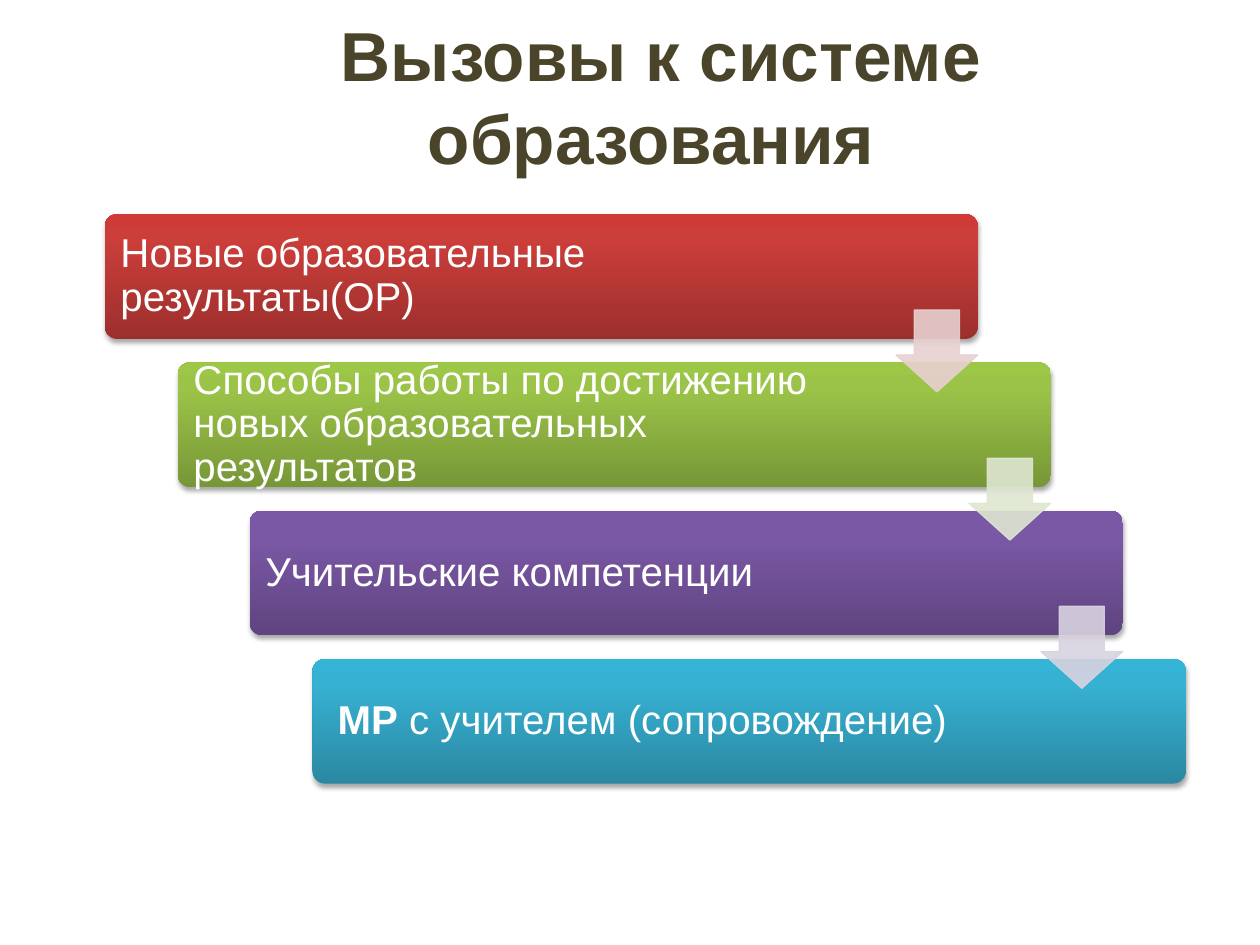
import lxml.etree
import pptx
import pptx.dml.color
import pptx.enum.shapes
import pptx.enum.text
import pptx.oxml
import pptx.oxml.ns
import pptx.util

Pt = pptx.util.Pt
SHAPES = pptx.enum.shapes.MSO_SHAPE
ALIGN = pptx.enum.text.PP_ALIGN
NAMESPACE = pptx.oxml.ns.nsdecls("a")

STEP_WIDTH, STEP_HEIGHT = 499, 71.3
FIRST_TOP, STEP_PITCH = 122.4, 84.7
ARROW_SIZE = 46.8

# Left edge, text width, gradient (bottom to top), runs as (text, font, bold)
STEPS = [
    (59.8, 415.4, ("9C2F2D", "CB3E3A", "CE3B37"),
     [("Новые образовательные результаты(ОР)", "Arial", False)]),
    (101.5, 406.1, ("779737", "9BC348", "9DC746"),
     [("Способы работы по достижению новых образовательных результатов",
       "Arial", False)]),
    (142.6, 406.8, ("5F4480", "7B58A6", "7C57A8"),
     [("Учительские компетенции", "Arial", False)]),
    (178.6, 406.1, ("2A88A2", "37B1D2", "34B4D6"),
     [(" ", "Calibri", False), ("МР", "Arial", True),
      (" с учителем (сопровождение)", "Arial", False)]),
]
ARROW_COLORS = ["E8D0D0", "DEE7D1", "D8D3E0"]


def color(value):
    return pptx.dml.color.RGBColor.from_string(value)


def add_text_box(slide, left, top, width, height, inset_x, inset_y):
    box = slide.shapes.add_textbox(Pt(left), Pt(top), Pt(width), Pt(height))
    frame = box.text_frame
    frame.word_wrap = True
    frame.vertical_anchor = pptx.enum.text.MSO_ANCHOR.MIDDLE
    frame.margin_left = frame.margin_right = Pt(inset_x)
    frame.margin_top = frame.margin_bottom = Pt(inset_y)
    return frame.paragraphs[0]


def add_title(slide, left, top, width, height):
    paragraph = add_text_box(slide, left, top, width, height, 7.2, 3.6)
    paragraph.text = "Вызовы к системе образования "
    paragraph.alignment = ALIGN.CENTER
    font = paragraph.font
    font.name, font.size, font.bold = "Arial", Pt(39.6), True
    font.color.rgb = color("4A452A")


def set_gradient_and_shadow(shape, colors):
    stops = "".join(
        f'<a:gs pos="{position}"><a:srgbClr val="{value}"/></a:gs>'
        for position, value in zip((0, 80000, 100000), colors))
    gradient = pptx.oxml.parse_xml(
        f'<a:gradFill {NAMESPACE} rotWithShape="1"><a:gsLst>{stops}</a:gsLst>'
        '<a:lin ang="16200000" scaled="0"/></a:gradFill>')
    effects = pptx.oxml.parse_xml(
        f'<a:effectLst {NAMESPACE}><a:outerShdw blurRad="{Pt(3.1)}" '
        f'dist="{Pt(1.8)}" dir="5400000" rotWithShape="0">'
        '<a:srgbClr val="000000"><a:alpha val="35000"/></a:srgbClr>'
        '</a:outerShdw></a:effectLst>')
    shape.line.fill.background()
    properties = shape.element.spPr
    properties.find(pptx.oxml.ns.qn("a:ln")).addprevious(gradient)
    properties.append(effects)


def add_step(slide, left, top, width, height, text_width, colors, runs):
    # Coloured bar
    bar = slide.shapes.add_shape(SHAPES.ROUNDED_RECTANGLE,
                                 Pt(left), Pt(top), Pt(width), Pt(height))
    bar.adjustments[0] = 0.1
    set_gradient_and_shadow(bar, colors)

    # Label, kept clear of the arrow on the right
    paragraph = add_text_box(slide, left + 2, top + 2, text_width, height - 4,
                             7.2, 7.2)
    paragraph.line_spacing = 0.9
    paragraph.font.size = Pt(23)
    paragraph.font.color.rgb = color("FFFFFF")
    for text, font_name, bold in runs:
        run = paragraph.add_run()
        run.text = text
        run.font.name, run.font.bold = font_name, bold


def add_arrow(slide, left, top, size, value):
    arrow = slide.shapes.add_shape(SHAPES.DOWN_ARROW,
                                   Pt(left), Pt(top), Pt(size), Pt(size))
    arrow.shadow.inherit = False
    arrow.adjustments[0], arrow.adjustments[1] = 0.55, 0.45
    arrow.line.width = Pt(0.75)
    for fill in (arrow.fill, arrow.line.fill):
        fill.solid()
        fill.fore_color.rgb = color(value)
    # Slight transparency on fill and outline
    for element in arrow.element.spPr.iter(pptx.oxml.ns.qn("a:srgbClr")):
        alpha = lxml.etree.SubElement(element, pptx.oxml.ns.qn("a:alpha"))
        alpha.set("val", "90000")


def add_staircase(slide):
    for index, (left, text_width, colors, runs) in enumerate(STEPS):
        add_step(slide, left, FIRST_TOP + index * STEP_PITCH,
                 STEP_WIDTH, STEP_HEIGHT, text_width, colors, runs)
    # Each arrow is flush right with its step and leads to the next one
    for index, value in enumerate(ARROW_COLORS):
        add_arrow(slide, STEPS[index][0] + STEP_WIDTH - ARROW_SIZE,
                  FIRST_TOP + index * STEP_PITCH + 54.7, ARROW_SIZE, value)


def main():
    presentation = pptx.Presentation()
    presentation.slide_width, presentation.slide_height = Pt(720), Pt(540)
    slide = presentation.slides.add_slide(presentation.slide_layouts[6])
    add_title(slide, 59.8, 9.4, 635.8, 90)
    add_staircase(slide)
    presentation.save("out.pptx")


if __name__ == "__main__":
    main()
